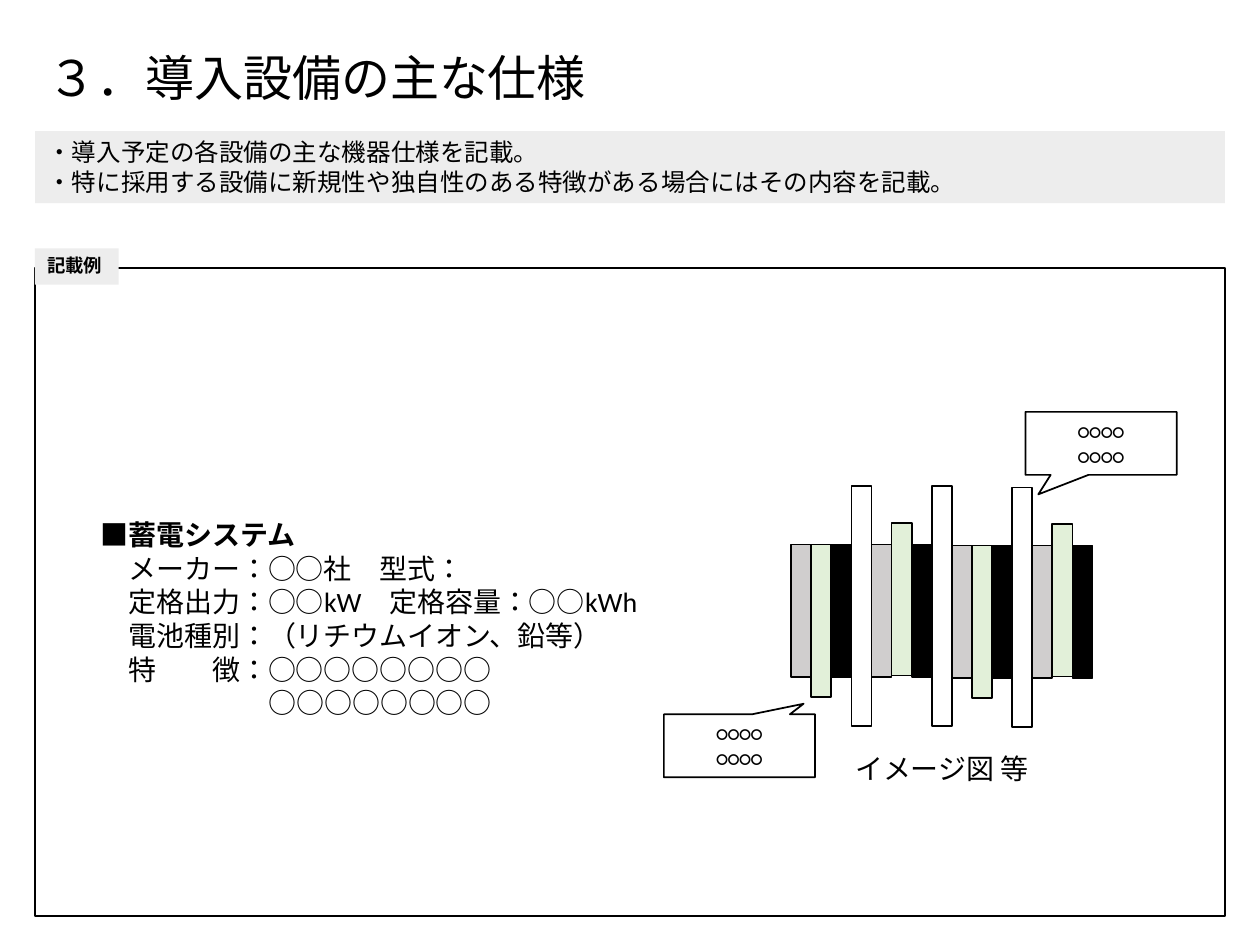
from pptx import Presentation
from pptx.dml.color import RGBColor as Rgb
from pptx.enum.shapes import MSO_SHAPE as Kind
from pptx.enum.text import MSO_ANCHOR as Anchor, PP_ALIGN as Align
from pptx.oxml.ns import qn
from pptx.util import Pt
from lxml import etree

HEX = {"ink": "000000", "pale": "EDEDED", "grey": "D0CECE",
       "green": "E2F0D9", "white": "FFFFFF"}
LATIN, ASIAN = "Calibri", "Noto Sans CJK JP"


def color(name):
    return Rgb.from_string(HEX[name])


def style(run, size, bold, east):
    font = run.font
    for key, val in {"name": LATIN, "size": Pt(size), "bold": bold}.items():
        setattr(font, key, val)
    font.color.rgb = color("ink")
    props = run._r.get_or_add_rPr()
    props.set("lang", "ja-JP")
    etree.SubElement(props, qn("a:ea")).set("typeface", east)


def write(shape, lines, size, bold=False, align=Align.LEFT,
          anchor=Anchor.TOP, wrap=True, east=ASIAN):
    frame = shape.text_frame
    frame.text = "\n".join(lines)
    for key, val in {"word_wrap": wrap, "vertical_anchor": anchor}.items():
        setattr(frame, key, val)
    for para in frame.paragraphs:
        para.alignment = align
        for run in para.runs:
            style(run, size, bold, east)
    return frame.paragraphs


def place(slide, box, fill=None, line=None, kind=Kind.RECTANGLE):
    shape = slide.shapes.add_shape(kind, *map(Pt, box))
    shape.shadow.inherit = False
    if fill:
        shape.fill.solid()
        shape.fill.fore_color.rgb = color(fill)
    else:
        shape.fill.background()
    if line:
        shape.line.color.rgb = color(line)
        shape.line.width = Pt(1)
    else:
        shape.line.fill.background()
    return shape


def text(slide, box, lines, size, **form):
    return write(slide.shapes.add_textbox(*map(Pt, box)), lines, size, **form)


def head(slide, box):
    title = slide.shapes.title
    for key, val in zip(("left", "top", "width", "height"), box):
        setattr(title, key, Pt(val))
    para, = write(title, ["３．導入設備の主な仕様"], 28, anchor=Anchor.MIDDLE)
    para.line_spacing = 0.9


def guide(slide, box):
    write(place(slide, box, "pale"), [
        "・導入予定の各設備の主な機器仕様を記載。",
        "・特に採用する設備に新規性や独自性のある特徴がある場合にはその内容を記載。",
    ], 14, east=LATIN)


def sample(slide, box):
    """Outlined frame with a tag on its top edge."""
    left, top, _, _ = box
    place(slide, box, line="ink")
    tag = place(slide, (left, top - 11.2, 47.8, 20.7), "pale")
    write(tag, ["記載例"], 10.5, bold=True, wrap=False)


def specs(slide, box):
    size = 16
    paras = text(slide, box, [
        "■蓄電システム",
        "メーカー：○○社　型式：",
        "定格出力：○○kW　定格容量：○○kWh",
        "電池種別：（リチウムイオン、鉛等）",
        "特　　徴：○○○○○○○○",
        "○○○○○○○○",
    ], size)
    paras[0].runs[0].font.bold = True
    paras[-1].runs[0].font.name = ASIAN
    for para, chars in zip(paras, (0, 1, 1, 1, 1, 6)):
        para._p.get_or_add_pPr().set("indent", str(Pt(size * chars)))


def cells(slide, box):
    """Row of plates: grey, green, black, white, in turn."""
    left, top, width, high = box
    count = 15
    step = width / count
    mid = top + high / 2
    for i in range(count):
        base = mid - 35.3 + (0.6 if i >= 8 else 0)
        drop, tall, fill = [
            (0, 75.6, "grey"),
            (-12.2 if i % 8 == 5 else 0, 87.2, "green"),
            (0, 75.6, "ink"),
            (-33.2, 137, "white"),
        ][i % 4]
        place(slide, (left + i * step, base + drop, step, tall), fill, "ink")


def note(slide, box, tip):
    shape = place(slide, box, line="ink", kind=Kind.RECTANGULAR_CALLOUT)
    for i, val in enumerate(tip):
        shape.adjustments[i] = val
    write(shape, ["○○○○"] * 2, 12, align=Align.CENTER, anchor=Anchor.MIDDLE)


def figure(slide, box):
    left, top, _, _ = box
    text(slide, (left + 102.2, top + 190.8, 115.2, 26.6), ["イメージ図 等"],
         16, wrap=False)
    cells(slide, (left + 72.7, top + 42.5, 172.2, 137))
    note(slide, (left + 206.6, top, 86.4, 36), (-0.415, 0.81))
    note(slide, (left, top + 172.8, 86.4, 36), (0.424, -0.667))


def main():
    deck = Presentation()
    deck.slide_width, deck.slide_height = Pt(720), Pt(540)
    slide = deck.slides.add_slide(deck.slide_layouts[5])
    head(slide, (20, 16.5, 680, 59))
    specs(slide, (50.4, 292.3, 324.7, 123.8))
    sample(slide, (20, 153.2, 680, 370.2))
    guide(slide, (20, 74.9, 680, 41.2))
    figure(slide, (379.4, 235.4, 293, 217.4))
    deck.save("out.pptx")


if __name__ == "__main__":
    main()
